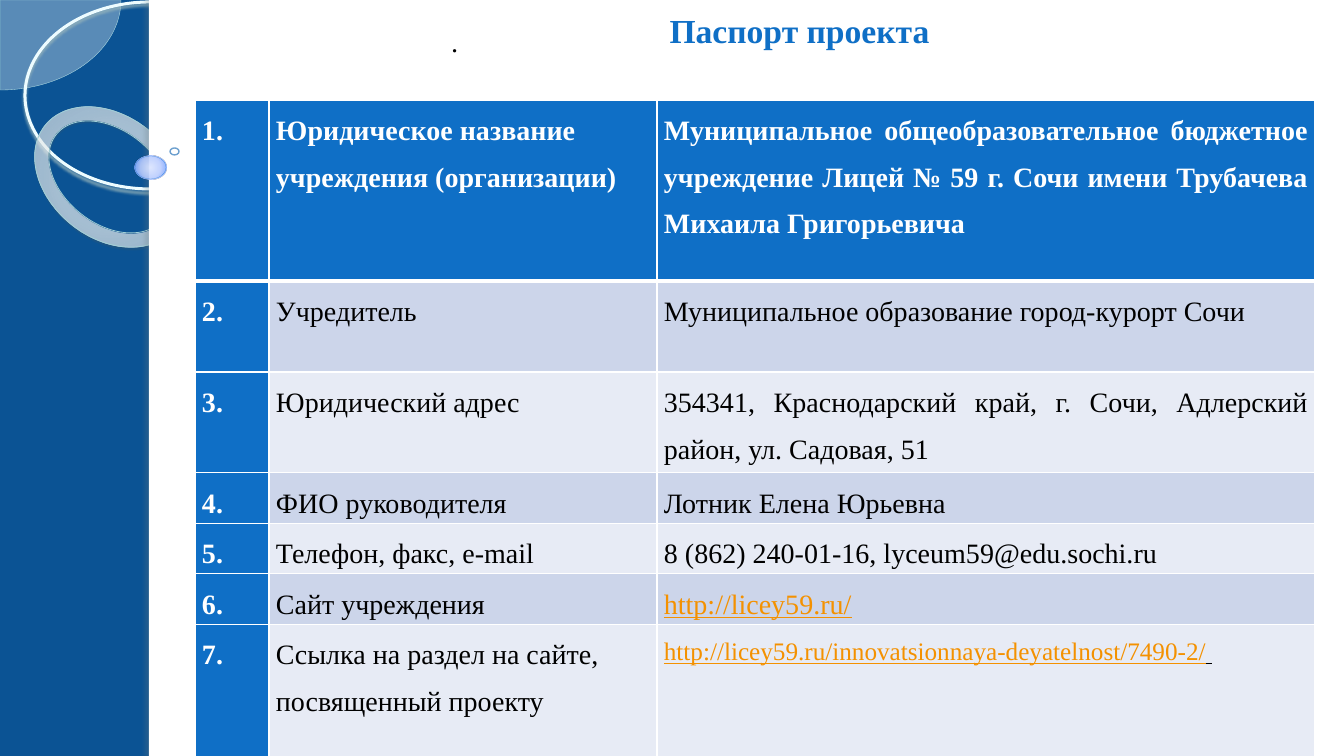
from pptx import Presentation
from pptx.dml.color import RGBColor
from pptx.enum.shapes import MSO_SHAPE as Shape
from pptx.enum.text import MSO_ANCHOR as Anchor, PP_ALIGN as Align
from pptx.oxml import parse_xml
from pptx.oxml.ns import nsdecls, qn
from pptx.util import Pt

SCALE = 914400 / 100.8
FONT = "Times New Roman"
BLUE, WHITE, BLACK, ORANGE = "0F6FC6", "FFFFFF", "000000", "F49100"
BANDS = ["E7EBF5", "CCD5EA"]
COLUMNS = [74, 388, 658]
HEIGHTS = [181, 91, 91, 45, 45, 45, 136]
ROWS = [
    ("Юридическое название учреждения (организации)",
     "Муниципальное общеобразовательное бюджетное учреждение "
     "Лицей № 59 г. Сочи имени Трубачева Михаила Григорьевича"),
    ("Учредитель", "Муниципальное образование город-курорт Сочи"),
    ("Юридический адрес",
     "354341, Краснодарский край, г. Сочи, Адлерский район, ул. Садовая, 51"),
    ("ФИО руководителя", "Лотник Елена Юрьевна"),
    ("Телефон, факс, e-mail", "8 (862) 240-01-16, lyceum59@edu.sochi.ru"),
    ("Сайт учреждения", "http://licey59.ru/"),
    ("Ссылка на раздел на сайте, посвященный проекту",
     "http://licey59.ru/innovatsionnaya-deyatelnost/7490-2/"),
]


def px(*lengths):
    return [round(length * SCALE) for length in lengths]


def color(code):
    return RGBColor.from_string(code)


def color_xml(code, alpha):
    return (f'<a:srgbClr {nsdecls("a")} val="{code}">'
            f'<a:alpha val="{alpha * 1000}"/></a:srgbClr>')


def add_figure(page, kind, box, fill=None, line=None, width=1, opacity=100):
    figure = page.shapes.add_shape(kind, *px(*box))
    figure.shadow.inherit = False
    if fill:
        figure.fill.solid()
        figure.fill.fore_color.rgb = color(fill)
    else:
        figure.fill.background()
    if line:
        figure.line.color.rgb = color(line)
        figure.line.width = Pt(width)
        if opacity < 100:
            outline = figure.line._ln.find(qn("a:solidFill"))
            outline.replace(outline[0], parse_xml(color_xml(line, opacity)))
    else:
        figure.line.fill.background()
    return figure


def set_gradient(figure, stops, left, top):
    marks = "".join(f'<a:gs pos="{place * 1000}">{color_xml(code, alpha)}</a:gs>'
                    for place, code, alpha in stops)
    inset_x, inset_y = left * 1000, top * 1000
    properties = figure._element.spPr
    properties.replace(properties.find(qn("a:noFill")), parse_xml(
        f'<a:gradFill {nsdecls("a")} rotWithShape="1"><a:gsLst>{marks}</a:gsLst>'
        f'<a:path path="circle"><a:fillToRect l="{inset_x}" t="{inset_y}" '
        f'r="{inset_x}" b="{inset_y}"/></a:path></a:gradFill>'))


def set_shadow(figure, code, alpha, blur, distance, angle):
    figure._element.spPr.find(qn("a:effectLst")).append(parse_xml(
        f'<a:outerShdw {nsdecls("a")} blurRad="{Pt(blur)}" dist="{Pt(distance)}" '
        f'dir="{angle * 60000}" algn="tl" rotWithShape="0">'
        f'{color_xml(code, alpha)}</a:outerShdw>'))


def add_decor(page, left, top, width, height):
    sector = add_figure(page, Shape.PIE, (left - 120, top - 90, 241, 180),
                        "F8FEFF", "AFDBE2", 0.25)
    sector.adjustments[0] = 0
    sector.adjustments[1] = 54.02
    solid = sector._element.spPr.find(qn("a:solidFill"))
    solid.replace(solid[0], parse_xml(color_xml("F8FEFF", 33)))

    orbit = add_figure(page, Shape.OVAL, (left + 25, top + 2, 250, 187),
                       None, "EDFCFF", 2.15)
    set_shadow(orbit, "9CB9BE", 85, 2, 2, 90)

    ring = add_figure(page, Shape.DONUT, (left + 27, top + 116, 165, 122),
                      None, "A1CFD6", 0.58)
    ring.adjustments[0] = 0.118
    ring.rotation = 38.6
    set_gradient(ring, [(0, "F9FEFF", 70), (70, "FDFFFF", 55),
                        (100, "9EF2FF", 60)], -408, -50)
    set_shadow(ring, "4B5E61", 35, 1, 1.2, 75)

    edge = left + 149
    add_figure(page, Shape.RECTANGLE, (edge, top, width - 149, height), WHITE)
    strip = add_figure(page, Shape.RECTANGLE, (edge, top, 11, height), WHITE)
    set_shadow(strip, "6C7A7C", 25, 3, 3, 180)

    bead = add_figure(page, Shape.OVAL, (left + 135, top + 156, 31, 23),
                      None, "066AC6", 0.16, 60)
    set_gradient(bead, [(0, "DDE6FF", 95), (50, "BCCEFF", 90),
                        (95, "6395FF", 88), (100, "006BCB", 85)], 25, 12)
    add_figure(page, Shape.OVAL, (left + 170, top + 148, 9, 7),
               None, "0D62AF", 1, 60)


def write(para, text, size, code, bold=False, align=Align.LEFT):
    para.add_run().text = text
    para.alignment = align
    para.font.name = FONT
    para.font.size = Pt(size)
    para.font.bold = bold
    para.font.color.rgb = color(code)


def add_text(page, box, anchor):
    frame = page.shapes.add_textbox(*px(*box)).text_frame
    frame.word_wrap = True
    frame.vertical_anchor = anchor
    return frame.paragraphs[0]


def add_heading(page, left, top, width, height):
    para = add_text(page, (left + 128, top + 20, width - 144, 44), Anchor.TOP)
    write(para, ".", 20, BLACK, align=Align.JUSTIFY)
    para.font.italic = True
    para._p.get_or_add_pPr().set("indent", str(px(59)[0]))
    title = add_text(page, (left, top, width, height), Anchor.BOTTOM)
    write(title, "Паспорт проекта", 24, BLUE, True, Align.CENTER)


def style_cell(cell, fill, bottom):
    cell.margin_left, cell.margin_right = px(7, 7)
    cell.margin_top = cell.margin_bottom = 0
    for side, width in (("L", 1), ("R", 1), ("T", 1), ("B", bottom)):
        cell._tc.get_or_add_tcPr().append(parse_xml(
            f'<a:ln{side} {nsdecls("a")} w="{Pt(width)}"><a:solidFill>'
            f'{color_xml(WHITE, 100)}</a:solidFill></a:ln{side}>'))
    cell.fill.solid()
    cell.fill.fore_color.rgb = color(fill)


def add_passport(page, left, top):
    table = page.shapes.add_table(
        len(ROWS), len(COLUMNS),
        *px(left, top, sum(COLUMNS), sum(HEIGHTS))).table
    for column, width in zip(table.columns, px(*COLUMNS)):
        column.width = width
    for index, (row, height) in enumerate(zip(table.rows, px(*HEIGHTS))):
        row.height = height
        texts = (f"{index + 1}.", *ROWS[index])
        for place, (cell, text) in enumerate(zip(row.cells, texts)):
            strong = index == 0 or place == 0
            link = text.startswith("http")
            last = link and index == len(ROWS) - 1
            style_cell(cell, BLUE if strong else BANDS[index % 2],
                       1 if index else 3)
            para = cell.text_frame.paragraphs[0]
            write(para, text, 18 if last else 20, WHITE if strong else BLACK,
                  strong, Align.JUSTIFY if place == 2 else Align.LEFT)
            para.line_spacing = 1.5
            para.font.underline = link
            if link:
                para.runs[0].font.color.rgb = color(ORANGE)
            if last:
                para.add_run().text = " "


def main():
    deck = Presentation()
    deck.slide_width, deck.slide_height = px(1344, 756)
    page = deck.slides.add_slide(deck.slide_layouts[6])
    page.background.fill.solid()
    page.background.fill.fore_color.rgb = color("0B5394")
    add_decor(page, 0, 0, 1344, 756)
    add_heading(page, 255, 0, 1089, 55)
    add_passport(page, 195, 100)
    deck.save("out.pptx")


if __name__ == "__main__":
    main()
